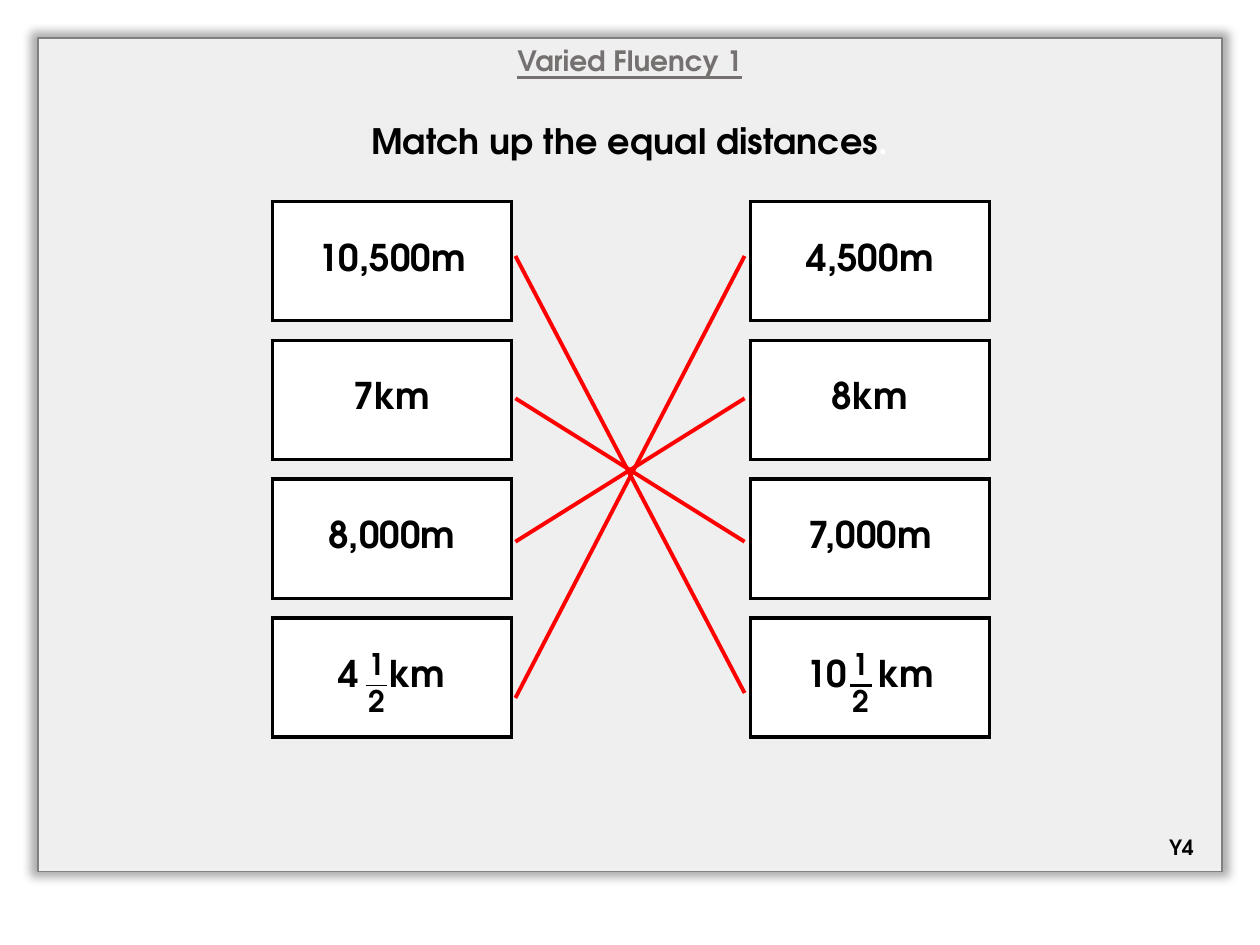
from lxml.etree import SubElement
from pptx import Presentation
from pptx.dml.color import RGBColor
from pptx.enum.shapes import MSO_CONNECTOR, MSO_SHAPE
from pptx.enum.text import MSO_ANCHOR, PP_ALIGN
from pptx.oxml import parse_xml
from pptx.oxml.ns import nsdecls, qn
from pptx.util import Cm, Pt

FONT = "TeX Gyre Adventor"
BLACK = RGBColor(0x00, 0x00, 0x00)
WHITE = RGBColor(0xFF, 0xFF, 0xFF)
TITLE_GREY = RGBColor(0x76, 0x71, 0x71)
EDGE_GREY = RGBColor(0x80, 0x80, 0x80)
ANSWER_RED = RGBColor(0xFF, 0x00, 0x00)

DISTANCES = [
    ("10,500m", "4,500m"),
    ("7km", "8km"),
    ("8,000m", "7,000m"),
    ("4 km", "10 km"),
]
NO_STYLE = "{2D5ABB26-0587-4C30-8999-92F81FD0307C}"
BOX_WIDTH, BOX_HEIGHT, GAP_HEIGHT = 4.82, 2.4, 0.4


def add_run(paragraph, text, size, color=BLACK):
    run = paragraph.add_run()
    run.text = text
    run.font.name = FONT
    run.font.size = Pt(size)
    run.font.bold = True
    run.font.color.rgb = color
    paragraph.alignment = PP_ALIGN.CENTER
    return run


def set_borders(cell, sides, width):
    """Draw black lines on the sides, given in the order L, R, T, B."""
    properties = cell._tc.get_or_add_tcPr()
    for side in sides:
        properties.append(parse_xml(
            f'<a:ln{side} {nsdecls("a")} w="{Pt(width)}"><a:solidFill>'
            f'<a:srgbClr val="{BLACK}"/></a:solidFill></a:ln{side}>'))


def set_margins(cell, horizontal, vertical):
    cell.margin_left = cell.margin_right = Cm(horizontal)
    cell.margin_top = cell.margin_bottom = Cm(vertical)
    cell.vertical_anchor = MSO_ANCHOR.MIDDLE


def add_plain_table(slide, left, top, row_heights, column_widths):
    frame = slide.shapes.add_table(
        len(row_heights), len(column_widths), Cm(left), Cm(top),
        Cm(sum(column_widths)), Cm(sum(row_heights)))
    table = frame.table
    table.first_row = table.horz_banding = False
    table._tbl.tblPr.find(qn("a:tableStyleId")).text = NO_STYLE
    for row, height in zip(table.rows, row_heights):
        row.height = Cm(height)
    for column, width in zip(table.columns, column_widths):
        column.width = Cm(width)
    return table


def add_panel(slide, left, top, width, height):
    """Translucent panel with a soft halo, the title and the instruction."""
    panel = slide.shapes.add_shape(
        MSO_SHAPE.RECTANGLE, Cm(left), Cm(top), Cm(width), Cm(height))
    panel.fill.solid()
    panel.fill.fore_color.rgb = WHITE
    fill_color = panel._element.spPr.find(qn("a:solidFill"))[0]
    SubElement(fill_color, qn("a:alpha"), val="82000")
    panel.line.color.rgb = EDGE_GREY
    panel.line.width = Pt(1)
    panel._element.spPr.append(parse_xml(
        f'<a:effectLst {nsdecls("a")}><a:outerShdw blurRad="{Pt(5)}" '
        f'sx="101000" sy="101000" algn="ctr" rotWithShape="0">'
        f'<a:srgbClr val="{BLACK}"><a:alpha val="40000"/></a:srgbClr>'
        f'</a:outerShdw></a:effectLst>'))
    frame = panel.text_frame
    frame.vertical_anchor = MSO_ANCHOR.TOP
    frame.margin_top = Cm(1.65)
    paragraph = frame.paragraphs[0]
    add_run(paragraph, "Match up the equal distances", 20)
    add_run(paragraph, ".", 20, WHITE)

    title = slide.shapes.title
    title.left, title.top = Cm(left), Cm(top)
    title.width, title.height = Cm(width), Cm(1.2)
    title.text_frame.vertical_anchor = MSO_ANCHOR.TOP
    run = add_run(title.text_frame.paragraphs[0], "Varied Fluency 1", 16, TITLE_GREY)
    run.font.underline = True
    panel._element.addnext(title._element)  # in front of the panel


def add_distance(cell, text):
    """Write a distance; a space is widened to make room for a fraction."""
    paragraph = cell.text_frame.paragraphs[0]
    number, space, unit = text.partition(" ")
    add_run(paragraph, number, 21)
    if space:
        wide_space = add_run(paragraph, space, 21)
        wide_space.font._element.set("spc", "1180")
        add_run(paragraph, unit, 21)


def add_fraction(slide, left, top, line_width):
    table = add_plain_table(slide, left, top, [0.74, 0.74], [0.44])
    for row, (digit, side) in enumerate([("1", "B"), ("2", "T")]):
        cell = table.cell(row, 0)
        set_margins(cell, 0, 0)
        set_borders(cell, [side], line_width)
        cell.fill.background()
        add_run(cell.text_frame.paragraphs[0], digit, 17)


def add_distance_boxes(slide, left, top):
    """Two columns of boxes, with narrow empty rows and a column between."""
    heights = [BOX_HEIGHT, GAP_HEIGHT] * len(DISTANCES)
    table = add_plain_table(slide, left, top, heights[:-1], [BOX_WIDTH] * 3)
    for row in range(len(table.rows)):
        for column in range(3):
            cell = table.cell(row, column)
            box_row, box_column = row % 2 == 0, column % 2 == 0
            sides = ("LR" if box_row else "") + ("TB" if box_column else "")
            set_borders(cell, sides, 2.25)
            if box_row and box_column:
                set_margins(cell, 0.38, 0.2)
                cell.fill.solid()
                cell.fill.fore_color.rgb = WHITE
                add_distance(cell, DISTANCES[row // 2][column // 2])
            else:
                set_margins(cell, 0, 0)
                cell.fill.background()
                paragraph = cell.text_frame.paragraphs[0]
                SubElement(paragraph._p, qn("a:endParaRPr"), sz="100")
    add_fraction(slide, left + 1.88, top + 9.02, 1)
    add_fraction(slide, left + 11.65, top + 9.02, 2.25)


def add_answer_lines(slide, left, top):
    """Join each distance on the left to its match on the right."""
    starts = [1.1, 3.97, 6.86, 10.01]
    ends = [9.91, 6.86, 3.97, 1.1]
    for start, end in zip(starts, ends):
        line = slide.shapes.add_connector(
            MSO_CONNECTOR.STRAIGHT, Cm(left + 4.9), Cm(top + start),
            Cm(left + 9.52), Cm(top + end))
        line.line.color.rgb = ANSWER_RED
        line.line.width = Pt(2.25)
        SubElement(line._element.spPr, qn("a:effectLst"))


def add_year_label(slide, left, top, width, height):
    label = slide.shapes.add_textbox(Cm(left), Cm(top), Cm(width), Cm(height))
    label.text_frame.word_wrap = True
    add_run(label.text_frame.paragraphs[0], "Y4", 12)


def main():
    presentation = Presentation()
    presentation.slide_width, presentation.slide_height = Cm(25.4), Cm(19.05)
    slide = presentation.slides.add_slide(presentation.slide_layouts[5])
    add_panel(slide, 0.76, 0.76, 23.88, 16.81)
    add_distance_boxes(slide, 5.49, 4.06)
    add_year_label(slide, 23.16, 16.69, 1.32, 0.76)
    add_answer_lines(slide, 5.49, 4.06)
    presentation.save("out.pptx")


if __name__ == "__main__":
    main()
